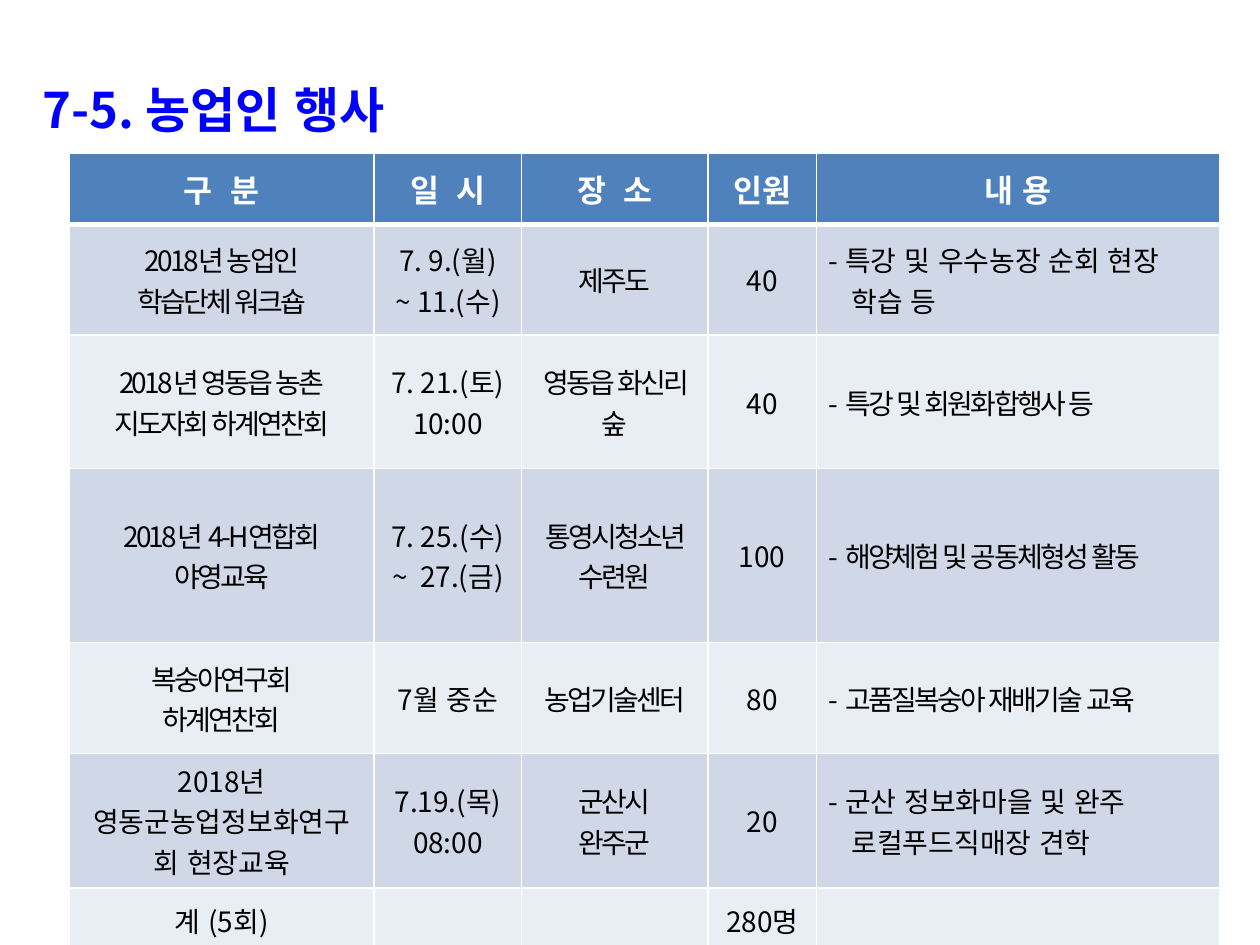
from lxml.etree import SubElement
from pptx import Presentation
from pptx.dml.color import RGBColor
from pptx.enum.lang import MSO_LANGUAGE_ID
from pptx.enum.text import MSO_ANCHOR, PP_ALIGN
from pptx.oxml import parse_xml
from pptx.oxml.ns import nsdecls, qn
from pptx.util import Inches, Pt

FONT = "Noto Sans CJK KR"


def rgb(color):
    return RGBColor.from_string(color)


def write(frame, text, size=16, color="000000", bold=False, align=PP_ALIGN.CENTER,
          tracking=0, line_spacing=None, dashed=False):
    """Write one paragraph per line; dashed puts a dash bullet on the first."""
    for i, line in enumerate(text.split("\n")):
        paragraph = frame.paragraphs[0] if i == 0 else frame.add_paragraph()
        paragraph.alignment = align
        if line_spacing:
            paragraph.line_spacing = line_spacing
        run = paragraph.add_run()
        run.text = line
        run.font.size = Pt(size)
        run.font.bold = bold
        run.font.name = FONT
        run.font.language_id = MSO_LANGUAGE_ID.KOREAN
        run.font.color.rgb = rgb(color)
        props = run._r.get_or_add_rPr()
        props.set("altLang", "en-US")
        props.set("spc", str(int(tracking * 100)))
        SubElement(props, qn("a:ea"), typeface=FONT)
        if dashed:
            layout = paragraph._p.get_or_add_pPr()
            layout.set("marL", str(Inches(0.13 if i == 0 else 0.18)))
            layout.set("indent", str(Inches(-0.13 if i == 0 else 0)))
            if i == 0:
                SubElement(layout, qn("a:buFont"), typeface=FONT)
                SubElement(layout, qn("a:buChar"), char="-")


prs = Presentation()
prs.slide_width, prs.slide_height = Inches(10), Inches(7.5)
slide = prs.slides.add_slide(prs.slide_layouts[6])

# Heading
heading = slide.shapes.add_textbox(Inches(0.24), Inches(0.44), Inches(9.38), Inches(0.78))
heading.text_frame.word_wrap = True
write(heading.text_frame, "7-5. 농업인 행사", size=28, color="0000FF", bold=True,
      align=PP_ALIGN.LEFT, line_spacing=1.3)

# Event schedule
events = [
    ("구  분", "일  시", "장  소", "인원", "내 용"),
    ("2018년 농업인\n학습단체 워크숍", "7. 9.(월)\n~ 11.(수)", "제주도", "40",
     "특강 및 우수농장 순회 현장\n학습 등"),
    ("2018년 영동읍 농촌\n지도자회 하계연찬회", "7. 21.(토)\n10:00", "영동읍 화신리 숲", "40",
     "특강 및 회원화합행사 등"),
    ("2018년 4-H연합회\n야영교육", "7. 25.(수)\n~  27.(금)", "통영시청소년수련원", "100",
     "해양체험 및 공동체형성 활동"),
    ("복숭아연구회\n하계연찬회", "7월 중순", "농업기술센터", "80",
     "고품질복숭아 재배기술 교육"),
    ("2018년 영동군농업정보화연구회 현장교육", "7.19.(목)\n08:00", "군산시\n완주군", "20",
     "군산 정보화마을 및 완주\n로컬푸드직매장 견학"),
    ("계 (5회)", "", "", "280명", ""),
]
column_widths = [2.42, 1.17, 1.48, 0.86, 3.2]
row_heights = [0.56, 0.88, 1.06, 1.38, 0.88, 1.07, 0.51]
schedule = slide.shapes.add_table(
    len(events), len(column_widths), Inches(0.55), Inches(1.22),
    Inches(sum(column_widths)), Inches(sum(row_heights))).table
for column, width in zip(schedule.columns, column_widths):
    column.width = Inches(width)
for row, height in zip(schedule.rows, row_heights):
    row.height = Inches(height)

for r, event in enumerate(events):
    for c, text in enumerate(event):
        cell = schedule.cell(r, c)
        cell.vertical_anchor = MSO_ANCHOR.MIDDLE
        cell.fill.solid()
        band = "4F81BD" if r == 0 else ("E9EDF4", "D0D8E8")[r % 2]
        cell.fill.fore_color.rgb = rgb(band)

        # White cell borders, heavier under the header
        for i, side in enumerate(("L", "R", "T", "B")):
            heavy = (r, side) == (0, "B")
            cell._tc.get_or_add_tcPr().insert(i, parse_xml(
                f'<a:ln{side} {nsdecls("a")} w="{Pt(3 if heavy else 1)}"><a:solidFill>'
                f'<a:srgbClr val="FFFFFF"/></a:solidFill></a:ln{side}>'))

        if not text:
            continue
        if r == 0:
            write(cell.text_frame, text, size=18, color="FFFFFF", bold=True)
            continue
        # Two-line names, places and one-line contents are set tight
        several_lines = "\n" in text
        tight = c == 2 or (c == 0 and several_lines) or (c == 4 and not several_lines)
        write(cell.text_frame, text, tracking=-1.5 if tight else 0, dashed=c == 4,
              align=PP_ALIGN.LEFT if c == 4 else PP_ALIGN.CENTER)

prs.save("out.pptx")
